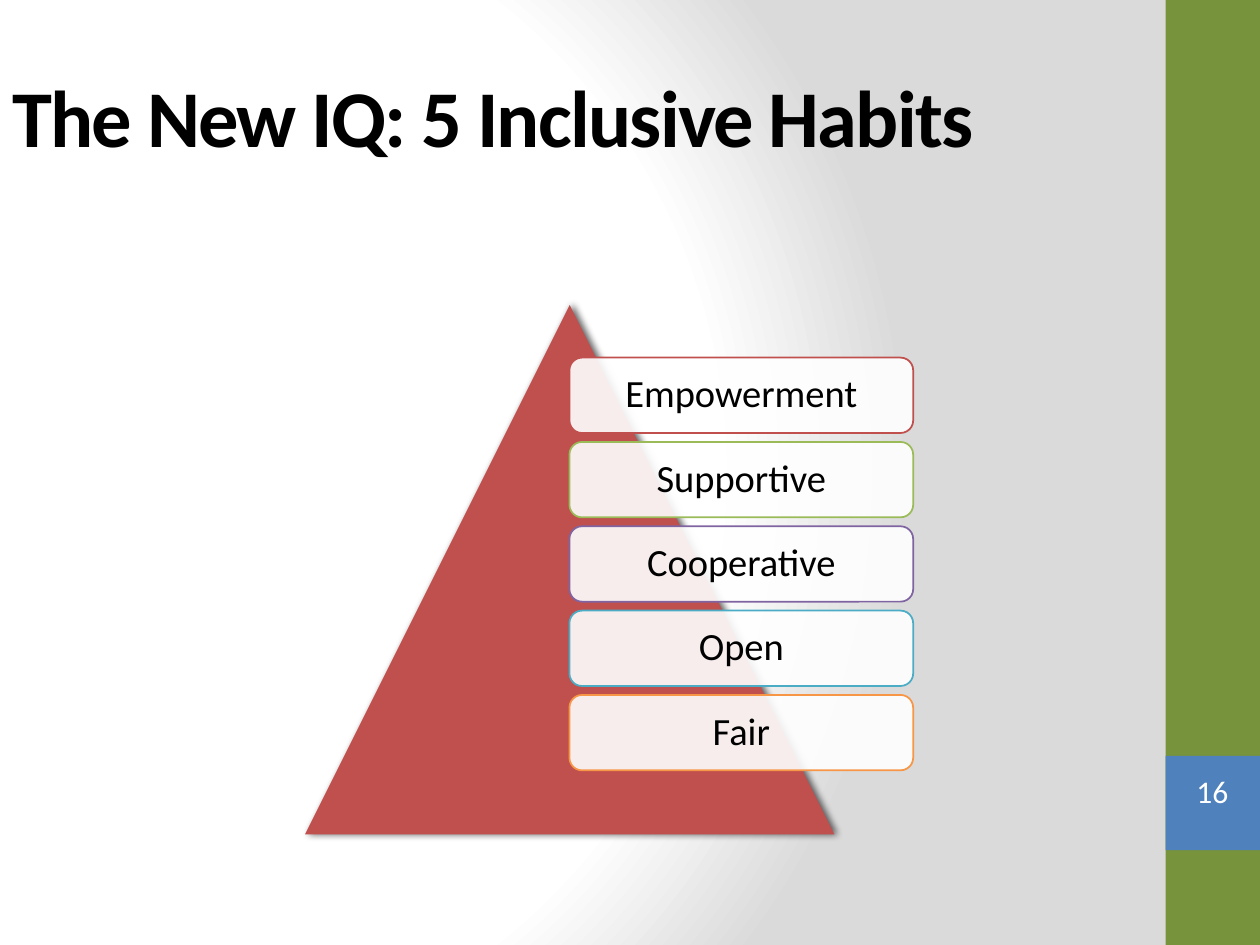
"""Build the slide on five inclusive habits around a pyramid."""
from dataclasses import dataclass

import lxml.etree
import pptx
import pptx.dml.color
import pptx.enum.shapes
import pptx.enum.text
import pptx.oxml
import pptx.oxml.ns
import pptx.util

Cm = pptx.util.Cm
Pt = pptx.util.Pt
qn = pptx.oxml.ns.qn
Shapes = pptx.enum.shapes.MSO_SHAPE
Align = pptx.enum.text.PP_ALIGN
NAMESPACE = pptx.oxml.ns.nsdecls("a")


@dataclass(frozen=True)
class Area:
    left: float
    top: float
    width: float
    height: float

    def lengths(self) -> tuple:
        return Cm(self.left), Cm(self.top), Cm(self.width), Cm(self.height)


@dataclass(frozen=True)
class Habit:
    name: str
    outline: str


HABITS = [
    Habit("Empowerment", "C0504D"),
    Habit("Supportive", "9BBB59"),
    Habit("Cooperative", "8064A2"),
    Habit("Open", "4BACC6"),
    Habit("Fair", "F79646"),
]
FIRST_HABIT = Area(11.48, 7.21, 6.93, 1.52)
HABIT_STEP = 1.7


def set_color(target, value: str) -> None:
    target.rgb = pptx.dml.color.RGBColor.from_string(value)


def write_text(shape, text: str, size: float, color: str, align, inset: float):
    frame = shape.text_frame
    frame.word_wrap = True
    frame.vertical_anchor = pptx.enum.text.MSO_ANCHOR.MIDDLE
    frame.margin_left = frame.margin_right = Cm(inset)
    frame.margin_top = frame.margin_bottom = Cm(inset)
    paragraph = frame.paragraphs[0]
    paragraph.alignment = align
    run = paragraph.add_run()
    run.text = text
    run.font.name = "Calibri"
    run.font.size = Pt(size)
    set_color(run.font.color, color)
    return run


def add_block(slide, kind, area: Area, fill: str):
    shape = slide.shapes.add_shape(kind, *area.lengths())
    shape.shadow.inherit = False
    shape.fill.solid()
    set_color(shape.fill.fore_color, fill)
    shape.line.fill.background()
    return shape


def paint_background(slide) -> None:
    slide.background.fill.gradient()
    old_gradient = next(slide.element.iter(qn("a:gradFill")))
    stops = "".join(
        f'<a:gs pos="{position}"><a:srgbClr val="{color}"/></a:gs>'
        for position, color in [(0, "FFFFFF"), (75000, "FFFFFF"), (100000, "DADADA")]
    )
    gradient = pptx.oxml.parse_xml(
        f'<a:gradFill {NAMESPACE} rotWithShape="1"><a:gsLst>{stops}</a:gsLst>'
        '<a:path path="circle"><a:fillToRect l="20000" t="50000" r="100000" b="50000"/>'
        "</a:path></a:gradFill>"
    )
    old_gradient.getparent().replace(old_gradient, gradient)


def add_title(slide, text: str) -> None:
    title = slide.shapes.title
    title.left, title.top, title.width, title.height = Area(0, 1.27, 22.86, 2.11).lengths()
    run = write_text(title, text, 46, "000000", Align.LEFT, 0.25)
    run.font.bold = True
    run.font.element.set("spc", "-100") if hasattr(run.font, "element") else \
        run._r.get_or_add_rPr().set("spc", "-100")


def add_pyramid(slide) -> None:
    area = Area(6.15, 6.15, 10.67, 10.67)
    pyramid = add_block(slide, Shapes.ISOSCELES_TRIANGLE, area, "C0504D")
    effects = next(pyramid.element.iter(qn("a:effectLst")))
    effects.append(pptx.oxml.parse_xml(
        f'<a:outerShdw {NAMESPACE} blurRad="{Pt(4)}" dist="{Pt(2)}" dir="0">'
        '<a:srgbClr val="000000"><a:alpha val="60000"/></a:srgbClr></a:outerShdw>'
    ))


def add_habit(slide, habit: Habit, area: Area) -> None:
    card = add_block(slide, Shapes.ROUNDED_RECTANGLE, area, "FFFFFF")
    fill_color = next(card.element.spPr.iter(qn("a:srgbClr")))
    lxml.etree.SubElement(fill_color, qn("a:alpha")).set("val", "90000")
    card.line.width = Pt(1)
    card.line.fill.solid()
    set_color(card.line.color, habit.outline)
    write_text(card, habit.name, 22, "000000", Align.CENTER, 0.23)
    card.text_frame.paragraphs[0].line_spacing = 0.9


def main() -> None:
    presentation = pptx.Presentation()
    presentation.slide_width, presentation.slide_height = Cm(25.4), Cm(19.05)
    slide = presentation.slides.add_slide(presentation.slide_layouts[5])
    paint_background(slide)
    add_block(slide, Shapes.RECTANGLE, Area(23.5, 0, 1.9, 19.05), "77933C")
    add_block(slide, Shapes.RECTANGLE, Area(23.5, 15.24, 1.9, 1.9), "4F81BD")
    add_title(slide, "The New IQ: 5 Inclusive Habits")
    add_pyramid(slide)
    for index, habit in enumerate(HABITS):
        top = FIRST_HABIT.top + index * HABIT_STEP
        add_habit(slide, habit, Area(FIRST_HABIT.left, top, FIRST_HABIT.width, FIRST_HABIT.height))
    number = slide.shapes.add_textbox(*Area(23.7, 15.44, 1.48, 1.02).lengths())
    write_text(number, "16", 18, "FFFFFF", Align.CENTER, 0)
    presentation.save("out.pptx")


if __name__ == "__main__":
    main()
